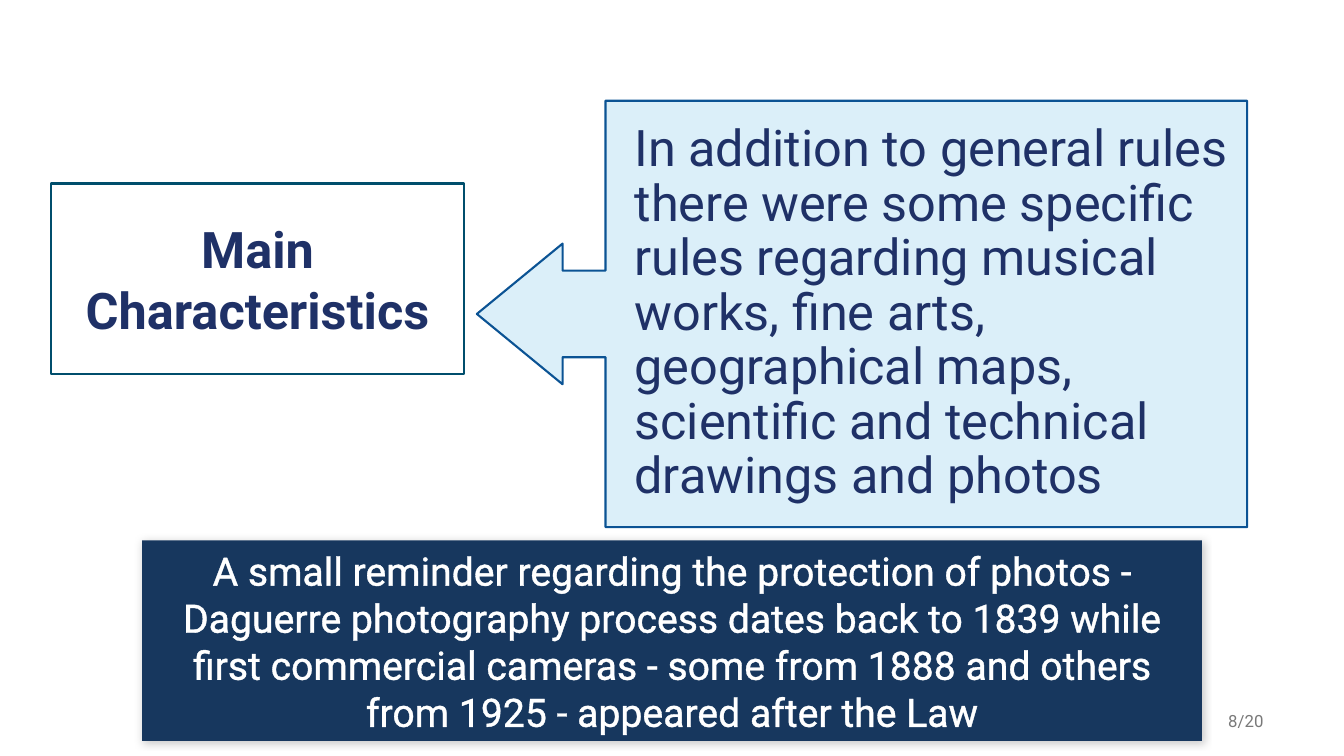
from lxml import etree
from pptx import Presentation
from pptx.dml.color import RGBColor
from pptx.enum.shapes import MSO_SHAPE
from pptx.enum.text import MSO_ANCHOR, MSO_AUTO_SIZE, PP_ALIGN
from pptx.oxml import parse_xml
from pptx.oxml.ns import qn
from pptx.util import Emu, Pt

RECTANGLE = MSO_SHAPE.RECTANGLE
CALLOUT = MSO_SHAPE.LEFT_ARROW_CALLOUT
MIDDLE = MSO_ANCHOR.MIDDLE
GROW = MSO_AUTO_SIZE.SHAPE_TO_FIT_TEXT
LEFT, CENTER, RIGHT = PP_ALIGN.LEFT, PP_ALIGN.CENTER, PP_ALIGN.RIGHT

WHITE = RGBColor(0xFF, 0xFF, 0xFF)
INK = RGBColor(0x1F, 0x31, 0x67)
GREY = RGBColor(0x79, 0x79, 0x79)
TEAL = RGBColor(0x00, 0x4E, 0x6C)
BLUE = RGBColor(0x0B, 0x53, 0x94)
PALE_BLUE = RGBColor(0xDB, 0xEF, 0xF9)
NAVY = RGBColor(0x17, 0x37, 0x5E)

FONT = "Roboto"
EMU_PER_PX = 9144  # 100 px to the inch
DRAWING = "http://schemas.openxmlformats.org/drawingml/2006/main"


def px(length):
    return Emu(length * EMU_PER_PX)


def write_text(box, text, *, size, color, align=LEFT, bold=False,
               indent=0, spacing=None, outline=None):
    """Fill a box with one formatted paragraph, centred vertically."""
    frame = box.text_frame
    frame.word_wrap = True
    frame.vertical_anchor = MIDDLE
    para = frame.paragraphs[0]
    para.alignment = align
    if indent:
        para._p.get_or_add_pPr().set("marL", str(px(indent)))
    if spacing:
        para.line_spacing = spacing
    span = para.add_run()
    span.text = text
    span.font.name = FONT
    span.font.size = Pt(size)
    span.font.bold = bold
    span.font.color.rgb = color
    if outline:
        span._r.get_or_add_rPr().insert(0, parse_xml(
            f'<a:ln xmlns:a="{DRAWING}" w="{Pt(outline)}"><a:solidFill>'
            f'<a:srgbClr val="{color}"/></a:solidFill></a:ln>'))


def add_panel(page, kind, place, *, fill, line=None):
    box = page.shapes.add_shape(kind, *map(px, place))
    box.shadow.inherit = False
    box.fill.solid()
    box.fill.fore_color.rgb = fill
    if line:
        box.line.color.rgb = line
        box.line.width = Pt(1.5)
    else:
        box.line.fill.background()
    return box


def add_shadow(box, *, opacity, blur, distance, angle):
    effects = box._element.spPr.find(qn("a:effectLst"))
    shadow = etree.SubElement(
        effects, qn("a:outerShdw"), blurRad=str(Pt(blur)),
        dist=str(Pt(distance)), dir=str(angle * 60000),
        algn="tl", rotWithShape="0")
    tint = etree.SubElement(shadow, qn("a:srgbClr"), val="000000")
    etree.SubElement(tint, qn("a:alpha"), val=str(opacity * 1000))


def main():
    deck = Presentation()
    deck.slide_width, deck.slide_height = px(1333), px(750)
    page = deck.slides.add_slide(deck.slide_layouts[6])

    # Page number
    number = page.shapes.add_textbox(*map(px, (963, 695, 300, 40)))
    write_text(number, "8/20", size=12, color=GREY, align=RIGHT)

    # Topic
    topic = add_panel(page, RECTANGLE, (51, 182, 409, 189),
                      fill=WHITE, line=TEAL)
    write_text(topic, "Main Characteristics", size=36, color=INK,
               align=CENTER, bold=True)

    # Callout pointing at the topic
    rules = add_panel(page, CALLOUT, (473, 100, 764, 423),
                      fill=PALE_BLUE, line=BLUE)
    for index, ratio in enumerate((0.203, 0.165, 0.201, 0.833)):
        rules.adjustments[index] = ratio
    write_text(rules, "In addition to general rules there were some specific "
               "rules regarding musical works, fine arts, geographical maps, "
               "scientific and technical drawings and photos",
               size=36, color=INK, indent=19, spacing=0.9)

    # Reminder band
    reminder = add_panel(page, RECTANGLE, (141, 536, 1051, 199), fill=NAVY)
    add_shadow(reminder, opacity=20, blur=6, distance=1, angle=45)
    write_text(reminder, "A small reminder regarding the protection of photos "
               "- Daguerre photography process dates back to 1839 while first "
               "commercial cameras - some from 1888 and others from 1925 - "
               "appeared after the Law",
               size=28, color=WHITE, align=CENTER, outline=0.8)
    reminder.text_frame.auto_size = GROW

    deck.save("out.pptx")


if __name__ == "__main__":
    main()
